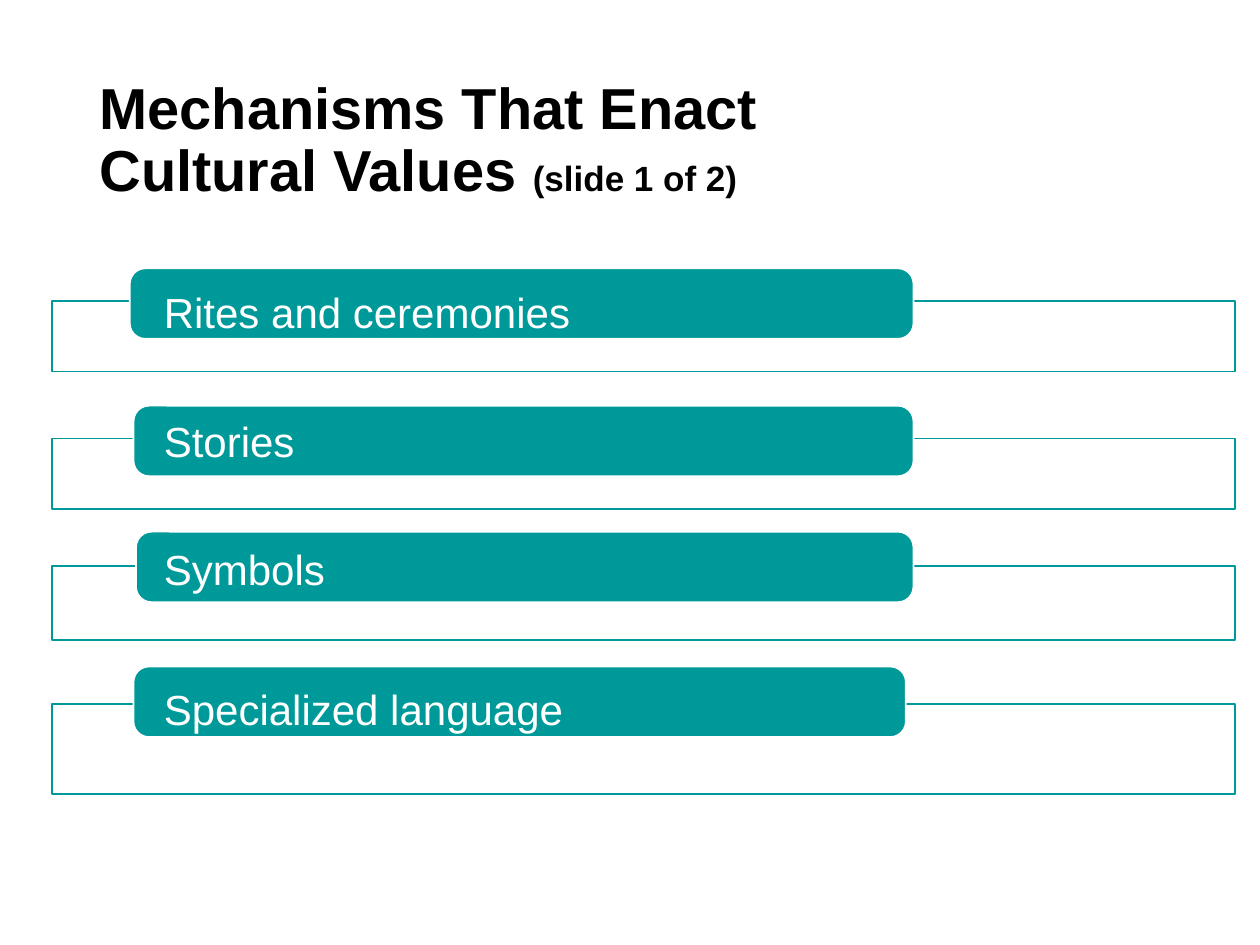
from lxml.etree import SubElement
from pptx import Presentation
from pptx.dml.color import RGBColor
from pptx.enum.shapes import MSO_SHAPE
from pptx.enum.text import MSO_ANCHOR, MSO_AUTO_SIZE, PP_ALIGN
from pptx.oxml.ns import qn
from pptx.util import Inches, Pt

TEAL = "009999"
WHITE = "FFFFFF"
TAB_HEIGHT = 0.56
FRAME_LEFT, FRAME_WIDTH = 0.41, 9.39

ROWS = [
    ("Rites and ceremonies", 0, (1.03, 2.13, 6.22), (2.39, 0.56)),
    ("Stories", 48, (1.06, 3.22, 6.19), (3.48, 0.56)),
    ("Symbols", 47, (1.08, 4.22, 6.17), (4.49, 0.59)),
    ("Specialized language", 54, (1.06, 5.29, 6.13), (5.59, 0.71)),
]


def rgb(value):
    return RGBColor.from_string(value)


def add_box(s, kind, left, top, width, height, fill=None, line=TEAL):
    sp = s.shapes.add_shape(kind, Inches(left), Inches(top), Inches(width), Inches(height))
    sp.shadow.inherit = False
    if fill:
        sp.fill.solid()
        sp.fill.fore_color.rgb = rgb(fill)
    else:
        sp.fill.background()
    sp.line.color.rgb = rgb(line)
    sp.line.width = Pt(1)
    return sp


def add_row(s, tab, frame):
    left, top, width = tab
    frame_top, frame_height = frame
    add_box(s, MSO_SHAPE.RECTANGLE, FRAME_LEFT, frame_top, FRAME_WIDTH, frame_height)
    sp = add_box(s, MSO_SHAPE.ROUNDED_RECTANGLE, left, top, width, TAB_HEIGHT, TEAL, WHITE)
    sp.adjustments[0] = 0.22


def place(s, sp, left, top, width, height, anchor):
    sp.left, sp.top = Inches(left), Inches(top)
    sp.width, sp.height = Inches(width), Inches(height)
    s.shapes.element.append(sp.element)
    tf = sp.text_frame
    tf.word_wrap = True
    tf.auto_size = MSO_AUTO_SIZE.NONE
    tf.vertical_anchor = anchor
    return tf


def format_paragraph(p, before=0):
    p.alignment = PP_ALIGN.LEFT
    p.line_spacing = 0.9
    p.space_before = Pt(before)
    p.space_after = Pt(0)


def add_text(p, text, size, color, bold=False):
    r = p.add_run()
    r.text = text
    r.font.name = "Arial"
    r.font.size = Pt(size)
    r.font.bold = bold
    r.font.color.rgb = rgb(color)


def remove_bullet(p):
    pPr = p._p.get_or_add_pPr()
    pPr.set("marL", "0")
    pPr.set("indent", "0")
    SubElement(pPr, qn("a:buNone"))


def fill_title(s):
    tf = place(s, s.shapes.title, 0.69, 0.4, 7.55, 1.45, MSO_ANCHOR.MIDDLE)
    p = tf.paragraphs[0]
    format_paragraph(p)
    add_text(p, "Mechanisms That Enact ", 33, "000000", bold=True)
    p.add_line_break()
    add_text(p, "Cultural Values ", 33, "000000", bold=True)
    add_text(p, "(slide 1 of 2)", 20, "000000", bold=True)


def fill_body(s):
    tf = place(s, s.placeholders[1], 1.2, 2.27, 7.8, 4.12, MSO_ANCHOR.TOP)
    for i, (text, before, _, _) in enumerate(ROWS):
        p = tf.add_paragraph() if i else tf.paragraphs[0]
        remove_bullet(p)
        format_paragraph(p, before)
        add_text(p, text, 24, WHITE)


def main():
    prs = Presentation()
    prs.slide_width, prs.slide_height = Inches(10), Inches(7.5)
    s = prs.slides.add_slide(prs.slide_layouts[1])
    for _, _, tab, frame in ROWS:
        add_row(s, tab, frame)
    fill_title(s)
    fill_body(s)
    prs.save("out.pptx")


if __name__ == "__main__":
    main()
